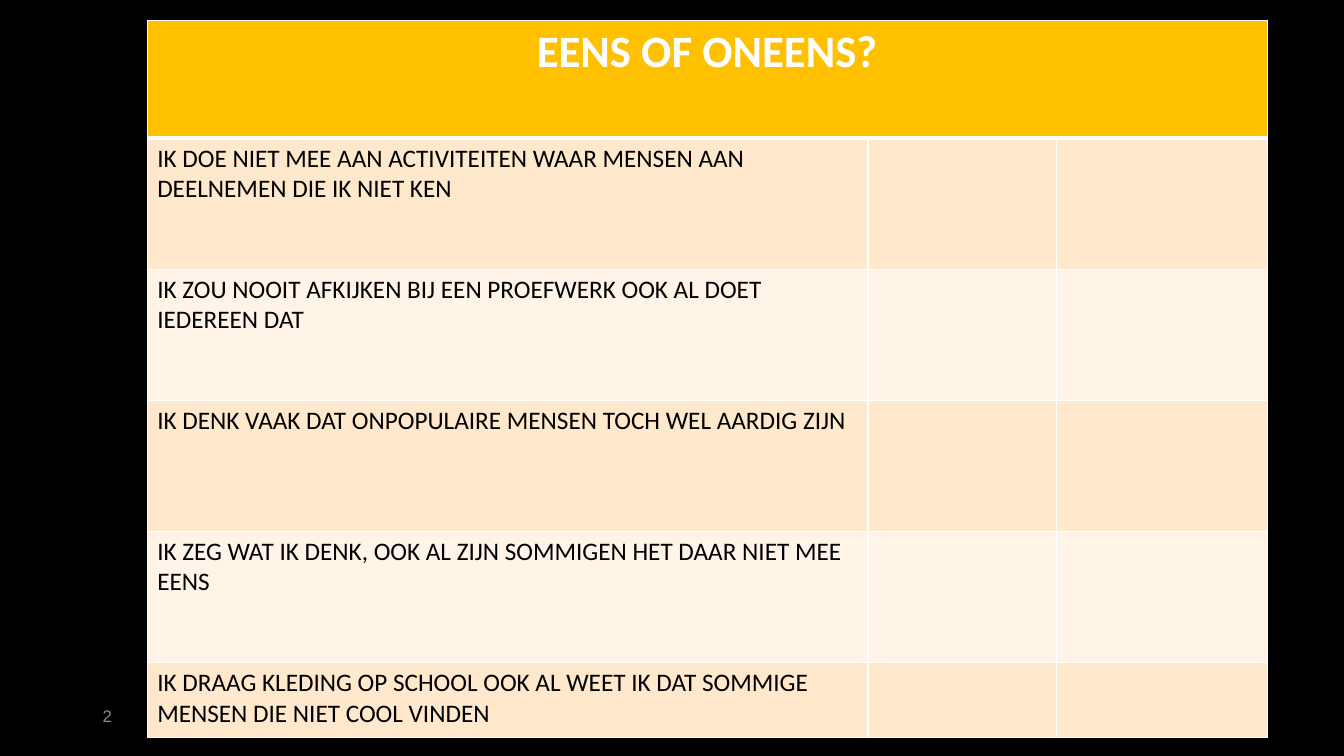
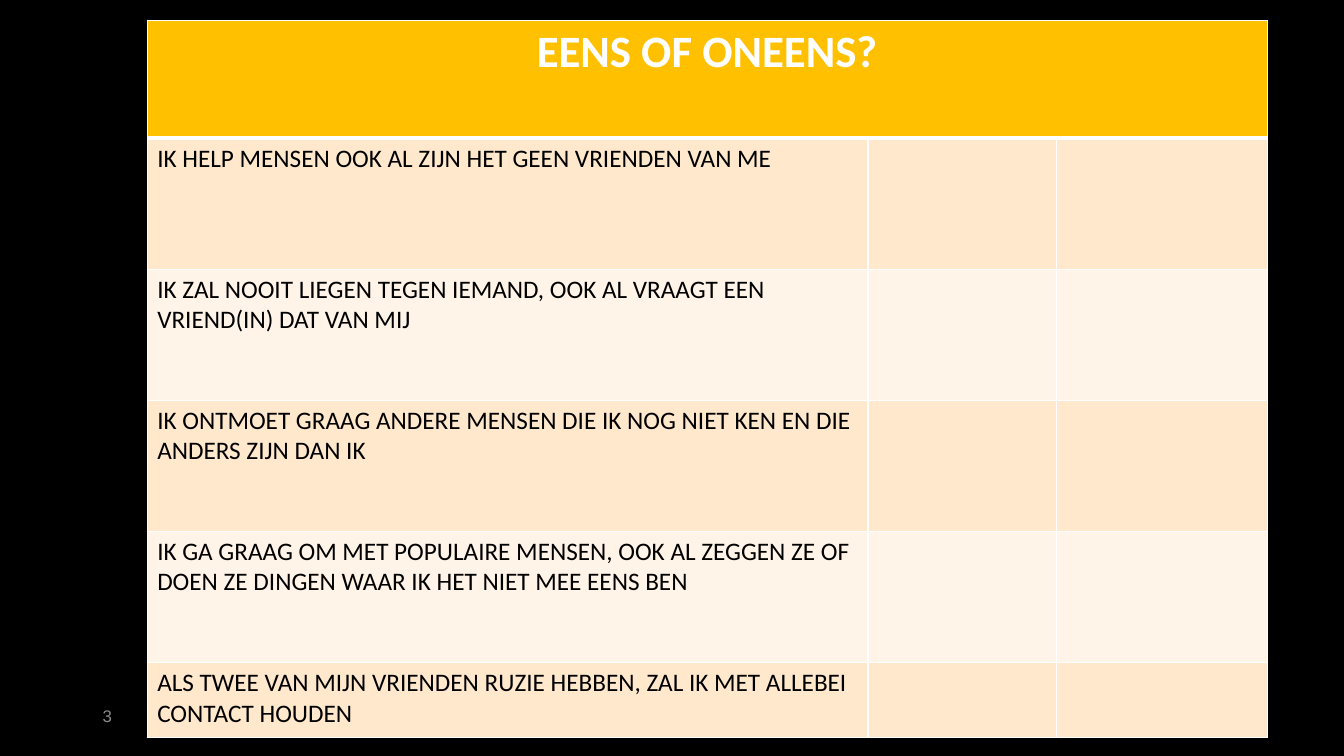
from lxml.etree import SubElement
from pptx import Presentation
from pptx.dml.color import RGBColor
from pptx.enum.text import MSO_ANCHOR, PP_ALIGN
from pptx.oxml.ns import qn
from pptx.util import Inches, Pt

BLACK, WHITE, GREY, GOLD = "000000", "FFFFFF", "8C8C8C", "FFC000"
BANDS = ["FFE8CC", "FFF4E7"]
TITLE = "EENS OF ONEENS?"
COLS = [7.15, 1.87, 2.09]
ROWS = [1.17] + [1.3] * 4 + [0.75]
SLIDES = {
    "2": [
        "IK DOE NIET MEE AAN ACTIVITEITEN WAAR MENSEN AAN DEELNEMEN DIE IK NIET KEN",
        "IK ZOU NOOIT AFKIJKEN BIJ EEN PROEFWERK OOK AL DOET IEDEREEN DAT",
        "IK DENK VAAK DAT ONPOPULAIRE MENSEN TOCH WEL AARDIG ZIJN",
        "IK ZEG WAT IK DENK, OOK AL ZIJN SOMMIGEN HET DAAR NIET MEE EENS",
        "IK DRAAG KLEDING OP SCHOOL OOK AL WEET IK DAT SOMMIGE MENSEN DIE NIET COOL VINDEN",
    ],
    "3": [
        "IK HELP MENSEN OOK AL ZIJN HET GEEN VRIENDEN VAN ME",
        "IK ZAL NOOIT LIEGEN TEGEN IEMAND, OOK AL VRAAGT EEN VRIEND(IN) DAT VAN MIJ",
        "IK ONTMOET GRAAG ANDERE MENSEN DIE IK NOG NIET KEN EN DIE ANDERS ZIJN DAN IK",
        "IK GA GRAAG OM MET POPULAIRE MENSEN, OOK AL ZEGGEN ZE OF DOEN ZE DINGEN WAAR IK HET NIET MEE EENS BEN",
        "ALS TWEE VAN MIJN VRIENDEN RUZIE HEBBEN, ZAL IK MET ALLEBEI CONTACT HOUDEN",
    ],
}


def paint(color_format, color):
    color_format.rgb = RGBColor.from_string(color)


def add_run(tf, text, size, color, font="Calibri", bold=False):
    r = tf.paragraphs[0].add_run()
    r.text = text
    r.font.size = Pt(size)
    r.font.name = font
    r.font.bold = bold
    paint(r.font.color, color)


prs = Presentation()
prs.slide_width, prs.slide_height = Inches(13.33), Inches(7.5)
master_fill = prs.slide_master.background.fill
master_fill.solid()
paint(master_fill.fore_color, BLACK)

for number, statements in SLIDES.items():
    s = prs.slides.add_slide(prs.slide_layouts[6])
    tf = s.shapes.add_textbox(Inches(0.92), Inches(6.9), Inches(3), Inches(0.4)).text_frame
    tf.word_wrap = True
    tf.vertical_anchor = MSO_ANCHOR.MIDDLE
    add_run(tf, number, 12, GREY, "Arial")

    table = s.shapes.add_table(len(ROWS), len(COLS), Inches(1.46), Inches(0.2),
                               Inches(sum(COLS)), Inches(sum(ROWS))).table
    for column, width in zip(table.columns, COLS):
        column.width = Inches(width)
    for i, (row, height) in enumerate(zip(table.rows, ROWS)):
        row.height = Inches(height)
        for cell in row.cells:
            tcPr = cell._tc.get_or_add_tcPr()
            for side in ("lnL", "lnR", "lnT", "lnB"):
                under_title = (i, side) in ((0, "lnB"), (1, "lnT"))
                ln = SubElement(tcPr, qn("a:" + side), w=str(Pt(3 if under_title else 1)))
                fill = SubElement(ln, qn("a:solidFill"))
                SubElement(fill, qn("a:srgbClr"), val=WHITE)
            cell.fill.solid()
            paint(cell.fill.fore_color, BANDS[(i - 1) % 2] if i else GOLD)

    title = table.cell(0, 0)
    title.merge(table.cell(0, len(COLS) - 1))
    add_run(title.text_frame, TITLE, 32, WHITE, bold=True)
    title.text_frame.paragraphs[0].alignment = PP_ALIGN.CENTER
    for i, statement in enumerate(statements, 1):
        add_run(table.cell(i, 0).text_frame, statement, 18, BLACK)

prs.save("out.pptx")
